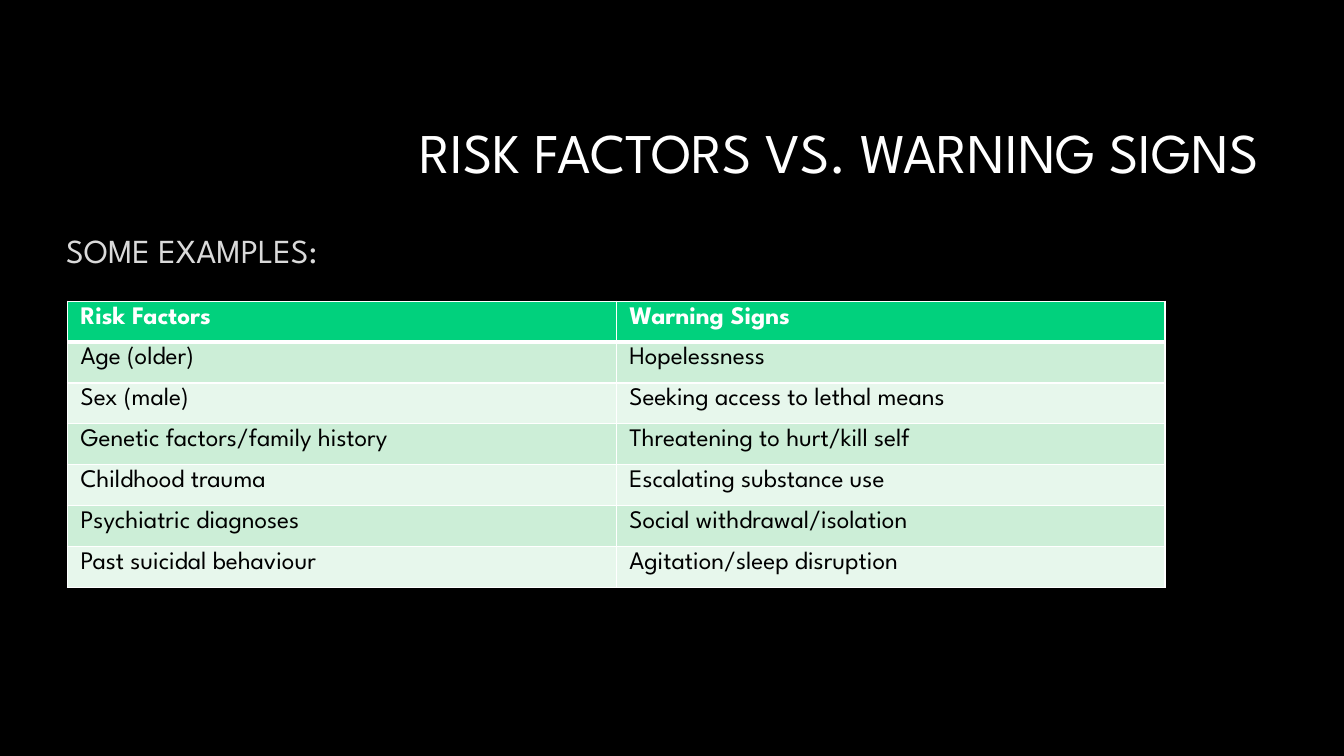
from lxml import etree
from pptx import Presentation
from pptx import util as u
from pptx.dml.color import RGBColor
from pptx.enum import text
from pptx.oxml import ns

FONT = "League Spartan"
ROWS = [
    ("Risk Factors", "Warning Signs"),
    ("Age (older)", "Hopelessness"),
    ("Sex (male)", "Seeking access to lethal means"),
    ("Genetic factors/family history", "Threatening to hurt/kill self"),
    ("Childhood trauma", "Escalating substance use"),
    ("Psychiatric diagnoses", "Social withdrawal/isolation"),
    ("Past suicidal behaviour", "Agitation/sleep disruption"),
]


def write(frame, words, size, color, bold=False):
    """Put one formatted run in the frame and return its paragraph and run."""
    para = frame.paragraphs[0]
    span = para.add_run()
    span.text = words
    for name, value in {"name": FONT, "size": u.Pt(size), "bold": bold}.items():
        setattr(span.font, name, value)
    span.font.color.rgb = RGBColor.from_string(color)
    return para, span


def add_borders(cell, widths):
    """Draw white cell borders; widths maps side letters to points."""
    properties = cell._tc.get_or_add_tcPr()
    for index, (side, width) in enumerate(widths.items()):
        line = etree.Element(ns.qn(f"a:ln{side}"), w=str(u.Pt(width)))
        fill = etree.SubElement(line, ns.qn("a:solidFill"))
        etree.SubElement(fill, ns.qn("a:srgbClr"), val="FFFFFF")
        properties.insert(index, line)


deck = Presentation()
deck.slide_width, deck.slide_height = u.Cm(33.87), u.Cm(19.05)
page = deck.slides.add_slide(deck.slide_layouts[5])
page.background.fill.solid()
page.background.fill.fore_color.rgb = RGBColor.from_string("000000")

title = page.shapes.title
title.left, title.top, title.width, title.height = map(u.Cm, (6.73, 2.13, 25.25, 3.58))
title.text_frame.vertical_anchor = text.MSO_ANCHOR.MIDDLE
heading, _ = write(title.text_frame, "RISK FACTORS VS. WARNING SIGNS", 40, "FFFFFF")
heading.alignment = text.PP_ALIGN.RIGHT
heading.line_spacing = 0.9

table = page.shapes.add_table(
    len(ROWS), 2, u.Cm(1.7), u.Cm(7.59), u.Cm(27.66), u.Cm(7.21)).table
for row_index, row in enumerate(ROWS):
    is_header = row_index == 0
    fill_color = "01D17D" if is_header else ("E7F7EC", "CCEED7")[row_index % 2]
    for column_index, words in enumerate(row):
        cell = table.cell(row_index, column_index)
        cell.margin_left = cell.margin_right = u.Cm(0.33)
        cell.margin_top = cell.margin_bottom = u.Cm(0.13)
        cell.fill.solid()
        cell.fill.fore_color.rgb = RGBColor.from_string(fill_color)
        write(cell.text_frame, words, 18, "FFFFFF" if is_header else "000000", is_header)
        add_borders(cell, {"L": 1, "R": 1, "T": 3 if row_index == 1 else 1,
                           "B": 3 if is_header else 1})

box = page.shapes.add_textbox(u.Cm(1.42), u.Cm(5.47), u.Cm(27.66), u.Cm(1.3))
box.text_frame.word_wrap = True
_, subtitle = write(box.text_frame, "some examples:", 30, "DADADA")
subtitle._r.get_or_add_rPr().set("cap", "small")

deck.save("out.pptx")
